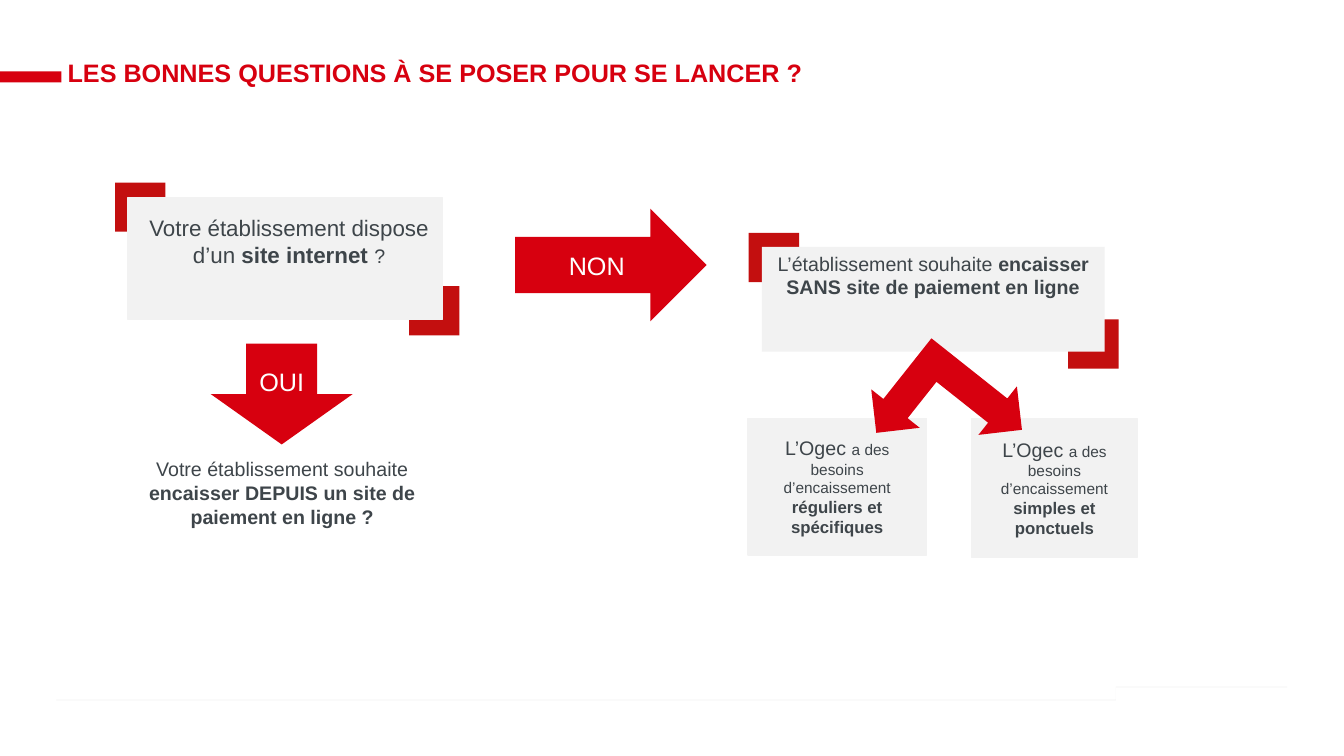
from lxml import etree
from pptx import Presentation
from pptx.dml.color import RGBColor
from pptx.enum import shapes, text
from pptx.oxml import ns
from pptx.util import Cm, Pt

RED = RGBColor(0xD7, 0x00, 0x0F)
DARK_RED = RGBColor(0xC3, 0x0F, 0x0F)
PALE = RGBColor(0xF2, 0xF2, 0xF2)
INK = RGBColor(0x3E, 0x45, 0x4A)
WHITE = RGBColor(0xFF, 0xFF, 0xFF)
FONT = "Arial"
KIND = shapes.MSO_SHAPE
TOP, MIDDLE, BOTTOM = text.MSO_ANCHOR.TOP, text.MSO_ANCHOR.MIDDLE, text.MSO_ANCHOR.BOTTOM
LEFT, CENTER = text.PP_ALIGN.LEFT, text.PP_ALIGN.CENTER

TITLE = [[("LES BONNES QUESTIONS À SE POSER POUR SE LANCER ?", 18, True)]]
WEBSITE = [[("Votre établissement dispose d’un ", 16, False),
            ("site internet ", 16, True), ("?", 14, False)]]
WITH_SITE = [[("Votre établissement souhaite ", 14, False),
              ("encaisser DEPUIS un site de paiement en ligne ?", 14, True)]]
WITHOUT_SITE = [[("L’établissement souhaite ", 14, False),
                 ("encaisser SANS site de paiement en ligne", 14, True)]]
REGULAR = [[("L’Ogec ", 14, False), ("a des besoins d’encaissement", 11, False)],
           [("réguliers et spécifiques", 12, True)]]
SIMPLE = [[("L’Ogec ", 14, False), ("a des besoins d’encaissement ", 11, False),
           ("simples et ponctuels", 12, True)]]

TITLE_AREA = (1.45, 0.33, 32.26, 2.01)
WEBSITE_AREA = (3.4, 5.26, 7.77, 2.54)
WITH_SITE_AREA = (3.23, 11.4, 7.77, 2.54)
TITLE_BAR = (0, 1.8, 1.55, 0.28)
FOOTER_LINE = [(28.12, 17.65), (1.42, 17.65), (1.42, 17.63), (28.12, 17.63),
               (28.12, 17.3), (32.44, 17.3), (32.44, 17.32), (28.12, 17.32)]
CORNER_SIZE = (1.27, 1.24)
CORNERS = [(26.92, 8.05), (18.87, 5.87), (10.31, 7.21), (2.9, 4.6)]
CARDS = [
    ((3.23, 4.98, 7.92, 3.07), True, TOP, []),
    ((19.2, 6.22, 8.64, 2.64), False, TOP, WITHOUT_SITE),
    ((18.85, 10.54, 4.5, 3.45), True, MIDDLE, REGULAR),
    ((24.49, 10.54, 4.17, 3.51), True, MIDDLE, SIMPLE),
]
ARROWS = [
    (KIND.RIGHT_ARROW, (12.98, 5.26, 4.83, 2.84), 0, "NON"),
    (KIND.LEFT_UP_ARROW, (22.05, 8.76, 3.61, 3.12), 218.4, ""),
    (KIND.DOWN_ARROW, (5.31, 8.66, 3.58, 2.54), 0, "OUI"),
]


def lengths(values):
    return [Cm(value) for value in values]


def paint(shape, color, outlined=False):
    shape.shadow.inherit = False
    shape.fill.solid()
    shape.fill.fore_color.rgb = color
    if outlined:
        shape.line.color.rgb = color
        shape.line.width = Pt(1)
    else:
        shape.line.fill.background()


def add_block(page, area, color, kind=KIND.RECTANGLE, outlined=False):
    block = page.shapes.add_shape(kind, *lengths(area))
    paint(block, color, outlined)
    return block


def write(box, paragraphs, color=INK, anchor=TOP, align=CENTER):
    frame = box.text_frame
    frame.word_wrap = True
    frame.auto_size = text.MSO_AUTO_SIZE.NONE
    frame.vertical_anchor = anchor
    for index, spans in enumerate(paragraphs):
        para = frame.add_paragraph() if index else frame.paragraphs[0]
        para.alignment = align
        para.space_before = Pt(0)
        for words, size, bold in spans:
            span = para.add_run()
            span.text = words
            span.font.name = FONT
            span.font.size = Pt(size)
            span.font.bold = bold
            span.font.color.rgb = color


def place(holder, area):
    holder.left, holder.top, holder.width, holder.height = lengths(area)
    holder.element.getparent().append(holder.element)


def remove_bullet(para):
    properties = para._p.get_or_add_pPr()
    properties.set("marL", "0")
    properties.set("indent", "0")
    etree.SubElement(properties, ns.qn("a:buNone"))


def main():
    deck = Presentation()
    deck.slide_width, deck.slide_height = Cm(33.87), Cm(19.05)
    page = deck.slides.add_slide(deck.slide_layouts[1])
    title, website = page.placeholders

    start, *others = [lengths(point) for point in FOOTER_LINE]
    outline = page.shapes.build_freeform(*start)
    outline.add_line_segments(others, close=True)
    paint(outline.convert_to_shape(), PALE)

    add_block(page, TITLE_BAR, RED)
    place(title, TITLE_AREA)
    write(title, TITLE, RED, BOTTOM, LEFT)
    title.text_frame.paragraphs[0].line_spacing = 1.07

    for corner in CORNERS:
        add_block(page, corner + CORNER_SIZE, DARK_RED)
    for area, outlined, anchor, paragraphs in CARDS:
        card = add_block(page, area, PALE, outlined=outlined)
        write(card, paragraphs, anchor=anchor)

    place(website, WEBSITE_AREA)
    remove_bullet(website.text_frame.paragraphs[0])
    write(website, WEBSITE)
    write(page.shapes.add_textbox(*lengths(WITH_SITE_AREA)), WITH_SITE)

    for kind, area, angle, label in ARROWS:
        arrow = add_block(page, area, RED, kind)
        arrow.rotation = angle
        if label:
            write(arrow, [[(label, 18, False)]], WHITE, MIDDLE)

    deck.save("out.pptx")


if __name__ == "__main__":
    main()
